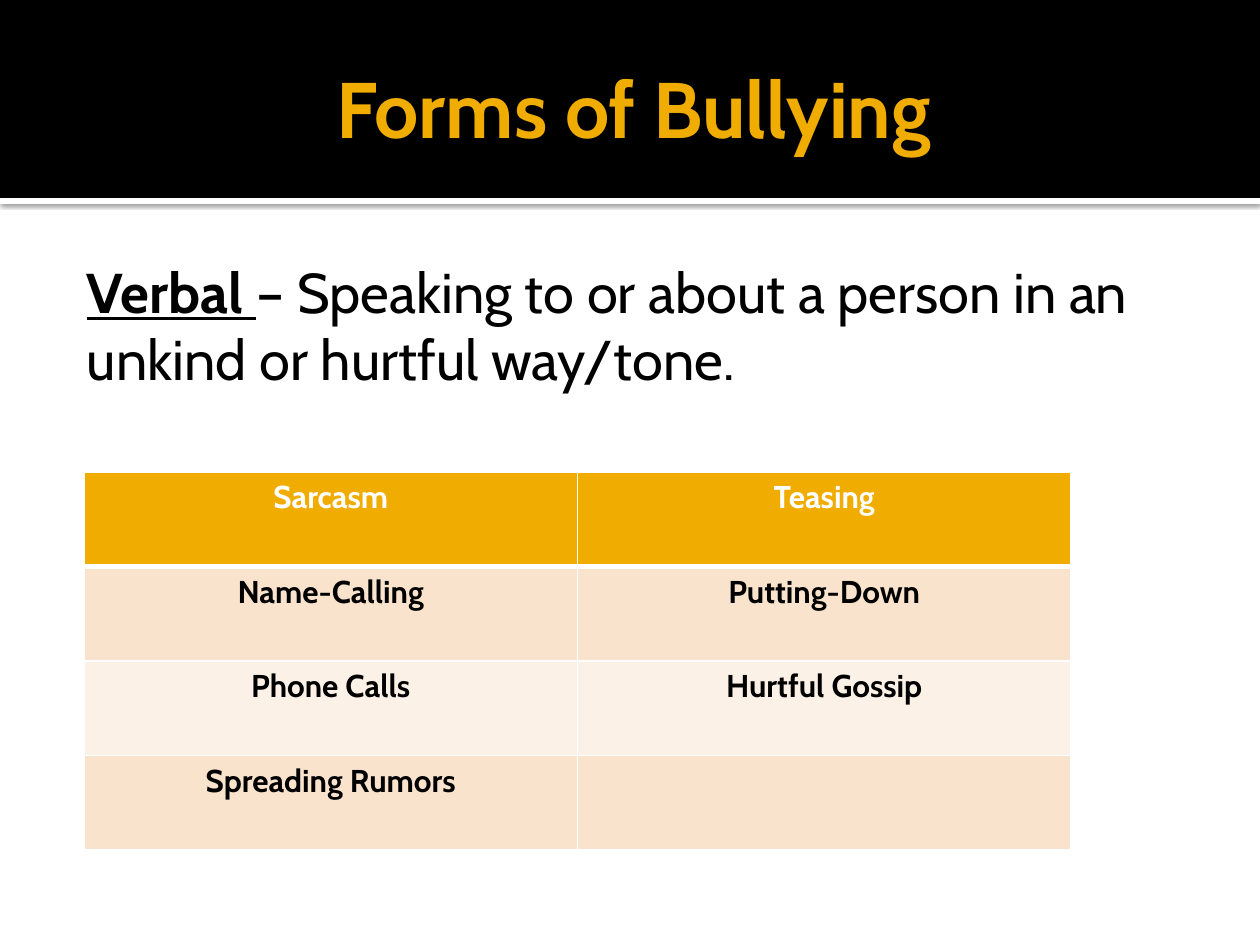
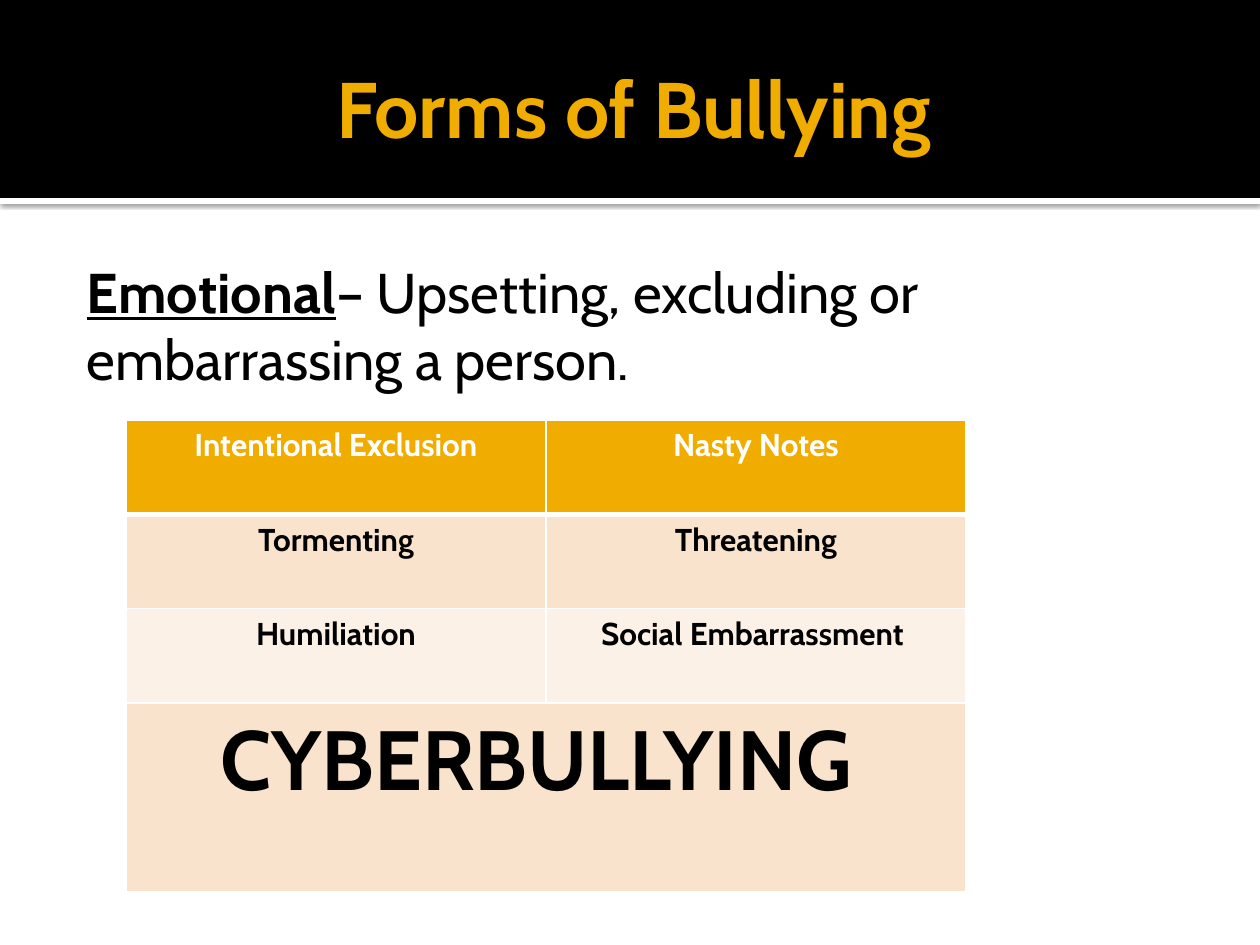
"""Build two slides on the forms of bullying."""
from lxml import etree
from pptx import Presentation
from pptx.dml.color import RGBColor as Rgb
from pptx.enum.shapes import MSO_SHAPE as Geo
from pptx.enum.text import MSO_ANCHOR as Anchor, MSO_AUTO_SIZE as Fit, PP_ALIGN as Align
from pptx.oxml.ns import qn
from pptx.util import Emu, Pt

INK = {"gold": "F0AD00", "black": "000000", "white": "FFFFFF",
       "peach": "F9E3CC", "cream": "FCF1E7"}
FONT = "Cabin"
TITLE = "Forms of Bullying"
WIDE, HIGH = 1260, 945


def px(num):
    """Turn px into EMU."""
    return Emu(round(num * 914400 / 126))


def rgb(name):
    """Look up a named colour."""
    return Rgb.from_string(INK[name])


def add_run(para, text, size, ink, bold=False, under=False):
    """Append one styled run."""
    run = para.add_run()
    run.text = text
    font = run.font
    font.name, font.size = FONT, Pt(size)
    font.bold, font.underline = bold, under
    font.color.rgb = rgb(ink)


def set_frame(frame, insets, anchor):
    """Set wrapping, insets and anchor of a text frame."""
    frame.word_wrap = True
    frame.auto_size = Fit.NONE
    frame.vertical_anchor = anchor
    (frame.margin_left, frame.margin_top,
     frame.margin_right, frame.margin_bottom) = map(px, insets)


def add_band(slide, top, high, ink):
    """Add a full-width band at the very back."""
    band = slide.shapes.add_shape(Geo.RECTANGLE, 0, px(top), px(WIDE), px(high))
    band.shadow.inherit = False
    band.fill.solid()
    band.fill.fore_color.rgb = rgb(ink)
    band.line.fill.background()
    slide.shapes._spTree.insert(2, band._element)
    return band


def add_shade(shape):
    """Give a shape a soft shadow below."""
    effects = shape._element.spPr.find(qn("a:effectLst"))
    shade = etree.SubElement(effects, qn("a:outerShdw"), blurRad=str(Pt(2.5)),
                             dist=str(Pt(0.8)), dir="5400000", algn="tl", rotWithShape="0")
    tint = etree.SubElement(shade, qn("a:srgbClr"), val=INK["black"])
    etree.SubElement(tint, qn("a:alpha"), val="60000")


def add_slide(deck):
    """Add a slide with the shared bands and title."""
    slide = deck.slides.add_slide(deck.slide_layouts[5])
    add_band(slide, 0, 198, "black")
    add_shade(add_band(slide, 198, 6, "white"))
    title = slide.shapes.title
    title.left, title.top, title.width, title.height = map(px, (63, 21, 1134, 173))
    set_frame(title.text_frame, (13, 6, 6, 6), Anchor.MIDDLE)
    para = title.text_frame.paragraphs[0]
    para.alignment = Align.CENTER
    add_run(para, TITLE, 45, "gold", bold=True)
    return slide


def add_body(slide, term, rest):
    """Add the definition of a term."""
    box = slide.shapes.add_textbox(*map(px, (63, 244, 1134, 638)))
    set_frame(box.text_frame, (8, 13, 13, 6), Anchor.TOP)
    para = box.text_frame.paragraphs[0]
    para._p.get_or_add_pPr().set("marL", str(px(16)))
    add_run(para, term, 32, "black", bold=True, under=True)
    add_run(para, rest, 32, "black")


def add_edges(cell, top, base):
    """Draw white cell borders, sides 1 pt wide."""
    props = cell._tc.get_or_add_tcPr()
    for spot, (side, size) in enumerate((("L", 1), ("R", 1), ("T", top), ("B", base))):
        line = etree.Element(qn("a:ln" + side), w=str(Pt(size)))
        fill = etree.SubElement(line, qn("a:solidFill"))
        etree.SubElement(fill, qn("a:srgbClr"), val=INK["white"])
        props.insert(spot, line)


def fill_cell(cell, row, text, size):
    """Fill, border and label one cell by its row."""
    cell.fill.solid()
    cell.fill.fore_color.rgb = rgb("gold" if row == 0 else "peach" if row % 2 else "cream")
    add_edges(cell, 3 if row == 1 else 1, 3 if row == 0 else 1)
    if text:
        para = cell.text_frame.paragraphs[0]
        para.alignment = Align.CENTER
        add_run(para, text, size, "black" if row else "white", bold=True)


def add_grid(slide, area, rows, parts, sizes):
    """Add a two-column table; a one-item row spans both columns."""
    left, top, wide, high = map(px, area)
    grid = slide.shapes.add_table(len(rows), 2, left, top, wide, high).table
    for row, (texts, part, size) in enumerate(zip(rows, parts, sizes)):
        grid.rows[row].height = high * part // sum(parts)
        if len(texts) == 1:
            grid.cell(row, 0).merge(grid.cell(row, 1))
        for col, text in enumerate(texts):
            fill_cell(grid.cell(row, col), row, text, size)


def main():
    """Build and save the deck."""
    deck = Presentation()
    deck.slide_width, deck.slide_height = px(WIDE), px(HIGH)

    verbal = add_slide(deck)
    add_body(verbal, "Verbal ",
             "– Speaking to or about a person in an unkind or hurtful way/tone.")
    add_grid(verbal, (84, 472, 987, 378),
             [("Sarcasm", "Teasing"), ("Name-Calling", "Putting-Down"),
              ("Phone Calls", "Hurtful Gossip"), ("Spreading Rumors", "")],
             (1, 1, 1, 1), (18, 18, 18, 18))

    mood = add_slide(deck)
    add_body(mood, "Emotional", "– Upsetting, excluding or embarrassing a person.")
    add_grid(mood, (126, 420, 840, 472),
             [("Intentional Exclusion", "Nasty Notes"), ("Tormenting", "Threatening"),
              ("Humiliation", "Social Embarrassment "), ("CYBERBULLYING ",)],
             (1, 1, 1, 2), (18, 18, 18, 48))

    deck.save("out.pptx")


if __name__ == "__main__":
    main()
